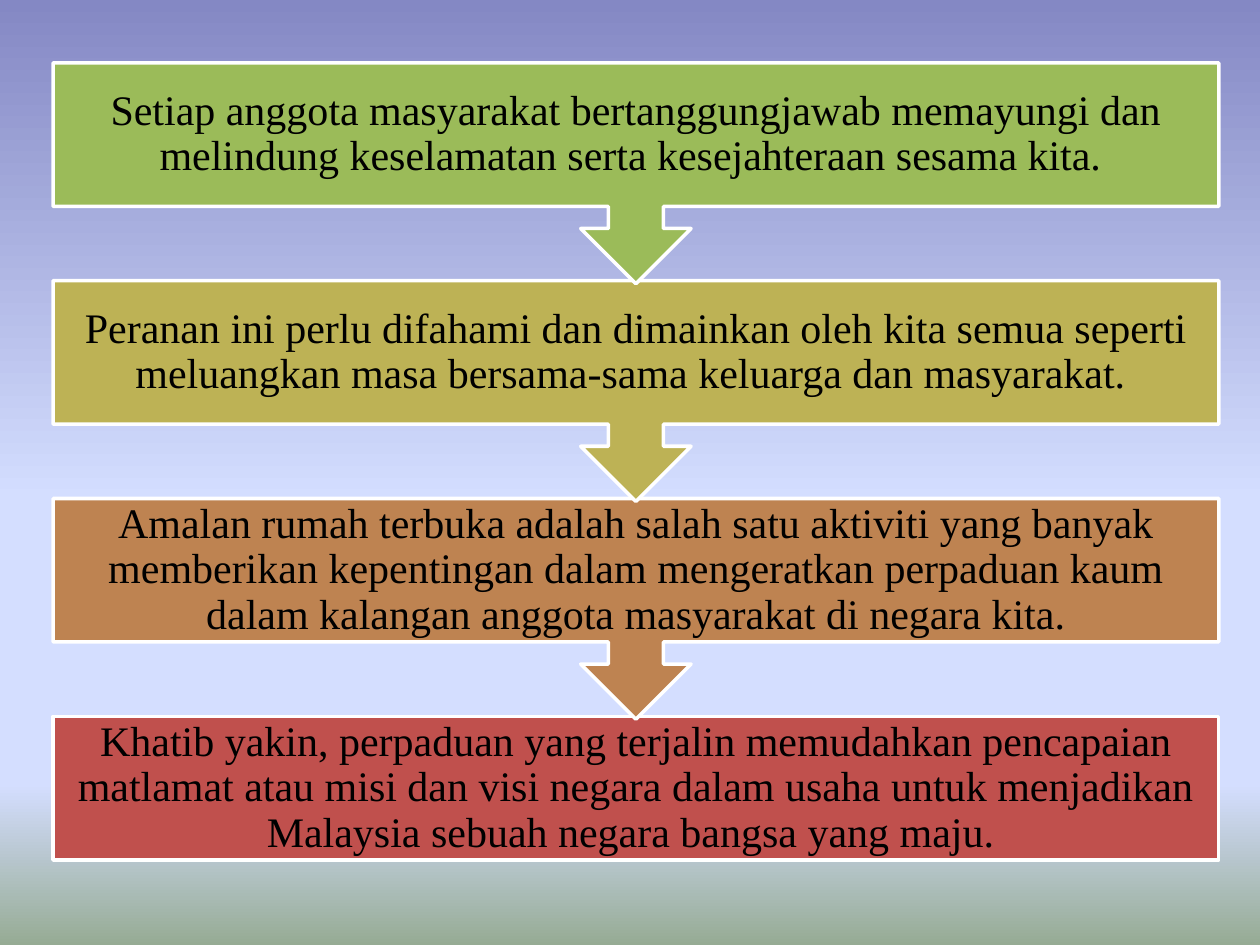
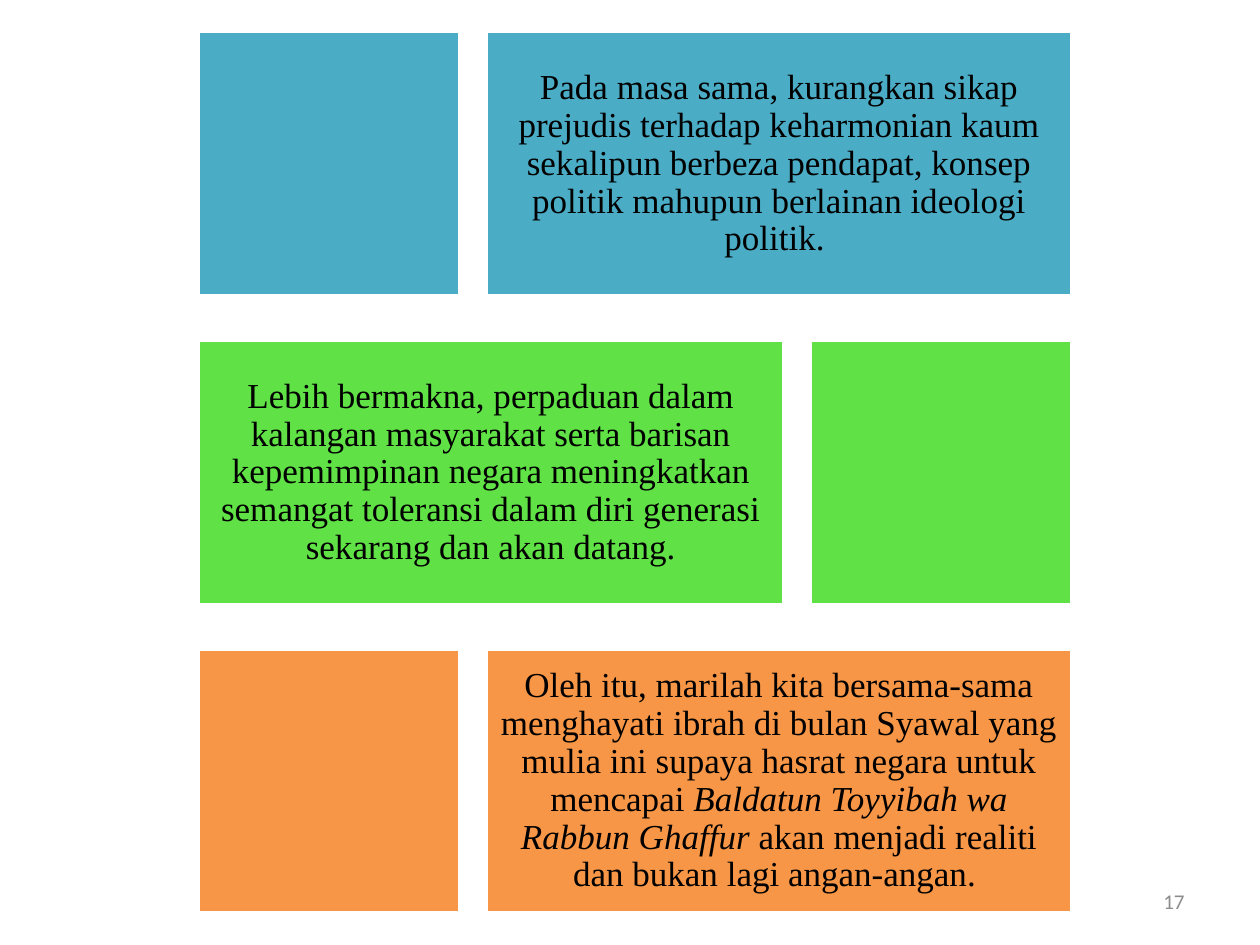
"""Build two slides on unity: a chain of arrow callouts and a staggered block list."""
from pptx import Presentation
from pptx.dml.color import RGBColor
from pptx.enum.shapes import MSO_SHAPE as Shape
from pptx.enum.text import MSO_ANCHOR as Anchor, PP_ALIGN as Align
from pptx.oxml.ns import qn
from pptx.util import Cm, Pt
from lxml.etree import SubElement

WHITE = RGBColor(0xFF, 0xFF, 0xFF)
BLACK = RGBColor(0x00, 0x00, 0x00)
GREY = RGBColor(0x8C, 0x8C, 0x8C)
GREEN = RGBColor(0x9B, 0xBB, 0x59)
OLIVE = RGBColor(0xBD, 0xB2, 0x55)
BROWN = RGBColor(0xBE, 0x83, 0x51)
RED = RGBColor(0xC0, 0x50, 0x4D)
TEAL = RGBColor(0x4B, 0xAC, 0xC6)
LIME = RGBColor(0x60, 0xE1, 0x46)
ORANGE = RGBColor(0xF7, 0x96, 0x46)
SKY_STOPS = [
    (0, RGBColor(0x84, 0x88, 0xC4)),
    (53, RGBColor(0xD4, 0xDE, 0xFF)),
    (83, RGBColor(0xD4, 0xDE, 0xFF)),
    (100, RGBColor(0x96, 0xAB, 0x94)),
]
BODY_FONT = "Times New Roman"


def add_block(slide, kind, left, top, width, height, color):
    shape = slide.shapes.add_shape(kind, Cm(left), Cm(top), Cm(width), Cm(height))
    shape.shadow.inherit = False
    shape.fill.solid()
    shape.fill.fore_color.rgb = color
    shape.line.color.rgb = WHITE
    shape.line.width = Pt(2)
    return shape


def write_text(shape, runs, size, inset):
    frame = shape.text_frame
    frame.word_wrap = True
    frame.vertical_anchor = Anchor.MIDDLE
    frame.margin_left = frame.margin_right = Cm(inset)
    frame.margin_top = frame.margin_bottom = Cm(inset)
    paragraph = frame.paragraphs[0]
    paragraph.alignment = Align.CENTER
    paragraph.line_spacing = 0.9
    paragraph.font.name = BODY_FONT
    paragraph.font.size = Pt(size)
    paragraph.font.color.rgb = BLACK
    for text, italic in runs:
        run = paragraph.add_run()
        run.text = text
        if italic:
            run.font.italic = True


presentation = Presentation()
presentation.slide_width = Cm(25.4)
presentation.slide_height = Cm(19.05)
blank_layout = presentation.slide_layouts[6]

chain_slide = presentation.slides.add_slide(blank_layout)
background = chain_slide.background.fill
background.gradient()
background.gradient_angle = 270
stop_list = chain_slide.element.find(".//" + qn("a:gsLst"))
for old_stop in list(stop_list):
    stop_list.remove(old_stop)
for position, color in SKY_STOPS:
    stop = SubElement(stop_list, qn("a:gs"), pos=str(position * 1000))
    SubElement(stop, qn("a:srgbClr"), val=str(color))

STEPS = [
    (GREEN, "Setiap anggota masyarakat bertanggungjawab memayungi dan melindung "
            "keselamatan serta kesejahteraan sesama kita. "),
    (OLIVE, "Peranan ini perlu difahami dan dimainkan oleh kita semua seperti "
            "meluangkan masa bersama-sama keluarga dan masyarakat. "),
    (BROWN, "Amalan rumah terbuka adalah salah satu aktiviti yang banyak memberikan "
            "kepentingan dalam mengeratkan perpaduan kaum dalam kalangan anggota "
            "masyarakat di negara kita."),
    (RED, "Khatib yakin, perpaduan yang terjalin memudahkan pencapaian matlamat atau "
          "misi dan visi negara dalam usaha untuk menjadikan Malaysia sebuah negara "
          "bangsa yang maju. "),
]
STEP_TOP, STEP_PITCH = 1.27, 4.39
last_step = len(STEPS) - 1
for index, (color, text) in reversed(list(enumerate(STEPS))):
    kind, height = Shape.DOWN_ARROW_CALLOUT, 4.45
    if index == last_step:
        kind, height = Shape.RECTANGLE, 2.9
    step = add_block(chain_slide, kind, 1.07, STEP_TOP + index * STEP_PITCH, 23.5, height, color)
    write_text(step, [(text, False)], 24, 0.48)

block_slide = presentation.slides.add_slide(blank_layout)
block_slide.background.fill.solid()
block_slide.background.fill.fore_color.rgb = WHITE

number_box = block_slide.shapes.add_textbox(Cm(18.21), Cm(17.65), Cm(5.92), Cm(1.02))
number_box.text_frame.word_wrap = True
number_box.text_frame.vertical_anchor = Anchor.MIDDLE
number = number_box.text_frame.paragraphs[0]
number.text = "17"
number.alignment = Align.RIGHT
number.font.name = "Calibri"
number.font.size = Pt(12)
number.font.color.rgb = GREY

ROWS = [
    (TEAL, [("Pada masa sama, kurangkan sikap prejudis terhadap keharmonian kaum "
             "sekalipun berbeza pendapat, konsep politik mahupun berlainan ideologi "
             "politik. ", False)]),
    (LIME, [("Lebih bermakna, perpaduan dalam kalangan masyarakat serta barisan "
             "kepemimpinan negara meningkatkan semangat toleransi dalam diri generasi "
             "sekarang dan akan datang.", False)]),
    (ORANGE, [("Oleh itu, marilah kita bersama-sama menghayati ibrah di bulan Syawal "
               "yang mulia ini supaya hasrat negara untuk mencapai ", False),
              ("Baldatun Toyyibah wa Rabbun Ghaffur", True),
              (" akan menjadi realiti dan bukan lagi angan-angan. ", False)]),
]
ROW_LEFT, ROW_TOP, ROW_PITCH, ROW_HEIGHT = 3.99, 0.64, 6.22, 5.33
TEXT_WIDTH, ACCENT_WIDTH, GAP = 11.81, 5.28, 0.53
for index, (color, runs) in enumerate(ROWS):
    top = ROW_TOP + index * ROW_PITCH
    text_left, accent_left = ROW_LEFT + ACCENT_WIDTH + GAP, ROW_LEFT
    if index % 2:
        text_left, accent_left = ROW_LEFT, ROW_LEFT + TEXT_WIDTH + GAP
    block = add_block(block_slide, Shape.RECTANGLE, text_left, top, TEXT_WIDTH, ROW_HEIGHT, color)
    write_text(block, runs, 20, 0.2)
    add_block(block_slide, Shape.RECTANGLE, accent_left, top, ACCENT_WIDTH, ROW_HEIGHT, color)

presentation.save("out.pptx")
